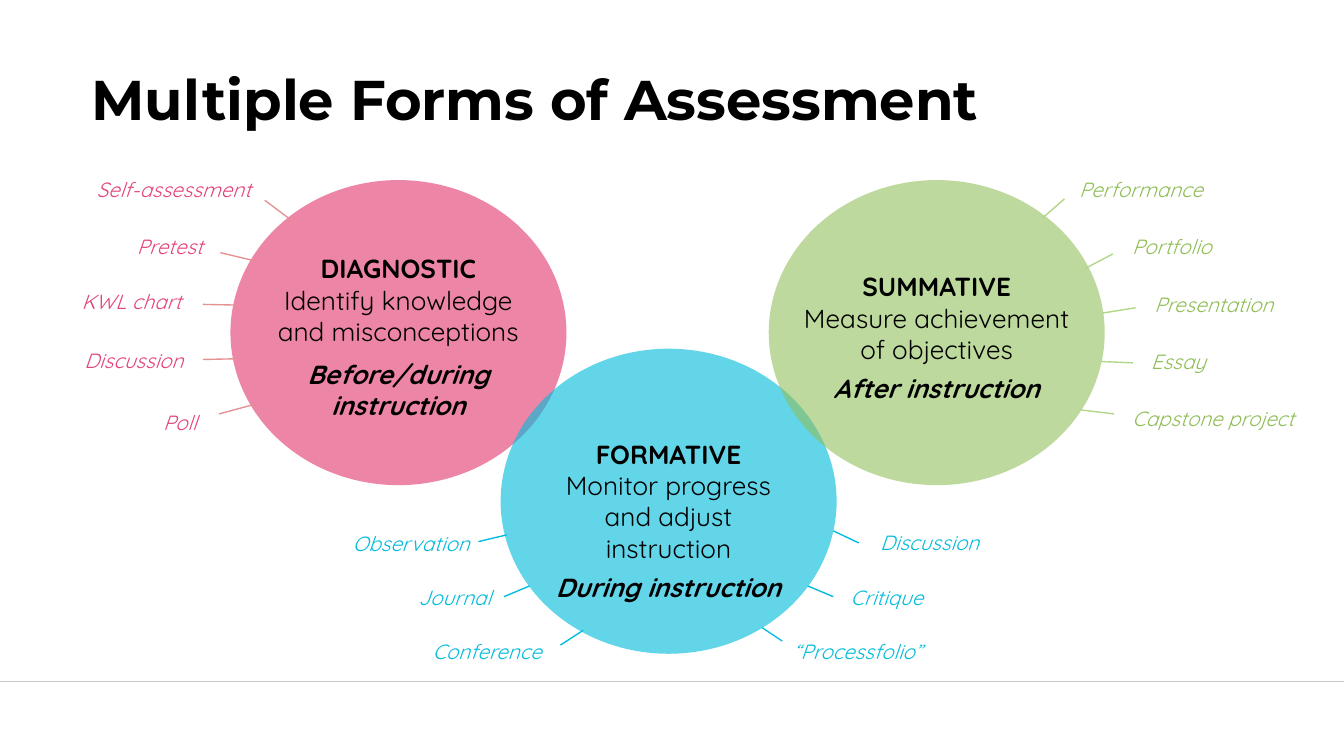
from lxml.etree import SubElement
from pptx import Presentation
from pptx.dml.color import RGBColor as RGB
from pptx.enum.shapes import MSO_CONNECTOR as CONN, MSO_SHAPE as SHAPE
from pptx.enum.text import MSO_ANCHOR as ANCHOR, MSO_AUTO_SIZE as AUTO, PP_ALIGN as ALIGN
from pptx.oxml.ns import qn
from pptx.util import Pt

PX = 4572
COLORS = {
    "pink": "E44577", "pink_line": "E49193",
    "blue": "03BCDC", "blue_line": "03BCDC",
    "green": "8FBE57", "green_line": "B2D688",
    "black": "000000", "gray": "C8C8C8",
}

prs = Presentation()
prs.slide_width, prs.slide_height = 2000 * PX, 1125 * PX
s = prs.slides.add_slide(prs.slide_layouts[5])


def add_line(x1, y1, x2, y2, color):
    ln = s.shapes.add_connector(CONN.STRAIGHT, x1 * PX, y1 * PX, x2 * PX, y2 * PX)
    ln.line.color.rgb = RGB.from_string(COLORS[color])
    ln.line.width = Pt(0.75)
    SubElement(ln._element.spPr, qn("a:effectLst"))


def add_text(x, y, w, h, text, size, color):
    tf = s.shapes.add_textbox(x * PX, y * PX, w * PX, h * PX).text_frame
    tf.word_wrap = True
    tf.margin_left = tf.margin_right = tf.margin_top = tf.margin_bottom = 20 * PX
    tf.text = text
    for p in tf.paragraphs:
        for r in p.runs:
            r.font.name = "Quicksand"
            r.font.size = Pt(size)
            r.font.color.rgb = RGB.from_string(COLORS[color])
    return tf


add_line(-4, 1014, 2004, 1014, "gray")

title = s.shapes.title
title.left, title.top, title.width, title.height = 121 * PX, 60 * PX, 1388 * PX, 158 * PX
tf = title.text_frame
tf.text = "Multiple Forms of Assessment"
tf.auto_size = AUTO.NONE
tf.vertical_anchor = ANCHOR.MIDDLE
tf.margin_left = tf.margin_right = 15 * PX
tf.margin_top = tf.margin_bottom = 8 * PX
p = tf.paragraphs[0]
p.alignment = ALIGN.LEFT
p.line_spacing = 1.15
f = p.runs[0].font
f.name, f.size, f.bold = "Montserrat", Pt(30), True
f.color.rgb = RGB.from_string(COLORS["black"])

topics = [
    ("pink", 65, (343, 268), (387, 356, 412), "DIAGNOSTIC",
     "Identify knowledge and misconceptions", "Before/during instruction", 6),
    ("blue", 62, (745, 519), (789, 632, 412), "FORMATIVE",
     "Monitor progress and adjust instruction", "During instruction", 4),
    ("green", 58, (1144, 268), (1174, 383, 440), "SUMMATIVE",
     "Measure achievement of objectives", "After instruction", 4),
]
for color, opacity, (x, y), box, heading, description, timing, gap in topics:
    sp = s.shapes.add_shape(SHAPE.OVAL, x * PX, y * PX, 500 * PX, 454 * PX)
    sp.shadow.inherit = False
    sp.line.fill.background()
    sp.fill.solid()
    sp.fill.fore_color.rgb = RGB.from_string(COLORS[color])
    rgb = sp._element.spPr.find(qn("a:solidFill")).find(qn("a:srgbClr"))
    SubElement(rgb, qn("a:alpha"), val=str(opacity * 1000))

    tf = add_text(*box, 190, f"{heading}\v{description}\n{timing}", 14, "black")
    about, when = tf.paragraphs
    about.alignment = when.alignment = ALIGN.CENTER
    about.runs[0].font.bold = True
    when.space_before = Pt(gap)
    when.runs[0].font.bold = when.runs[0].font.italic = True

examples = {
    "pink": [
        ("Self-assessment", 124, 245, 274, 394, 298, 434, 328),
        ("Pretest", 184, 330, 200, 328, 376, 378, 388),
        ("KWL chart", 102, 412, 200, 302, 453, 350, 454),
        ("Discussion", 106, 500, 200, 302, 535, 350, 534),
        ("Poll", 223, 592, 200, 326, 616, 378, 602),
    ],
    "blue": [
        ("Observation", 505, 772, 274, 712, 806, 754, 796),
        ("Journal", 603, 852, 274, 750, 888, 788, 872),
        ("Conference", 624, 932, 274, 834, 960, 868, 938),
        ("Discussion", 1290, 771, 318, 1240, 790, 1278, 808),
        ("Critique", 1246, 852, 274, 1202, 872, 1240, 888),
        ("“Processfolio”", 1161, 933, 274, 1134, 934, 1164, 954),
    ],
    "green": [
        ("Performance", 1586, 245, 330, 1552, 324, 1584, 296),
        ("Portfolio", 1665, 330, 262, 1614, 400, 1656, 378),
        ("Presentation", 1698, 416, 274, 1640, 466, 1690, 458),
        ("Essay", 1693, 501, 200, 1638, 538, 1686, 540),
        ("Capstone project", 1665, 586, 288, 1608, 610, 1658, 616),
    ],
}
for color, rows in examples.items():
    for label, x, y, w, *ends in rows:
        tf = add_text(x, y, w, 80, label, 11, color)
        tf.paragraphs[0].runs[0].font.italic = True
        add_line(*ends, f"{color}_line")

prs.save("out.pptx")
